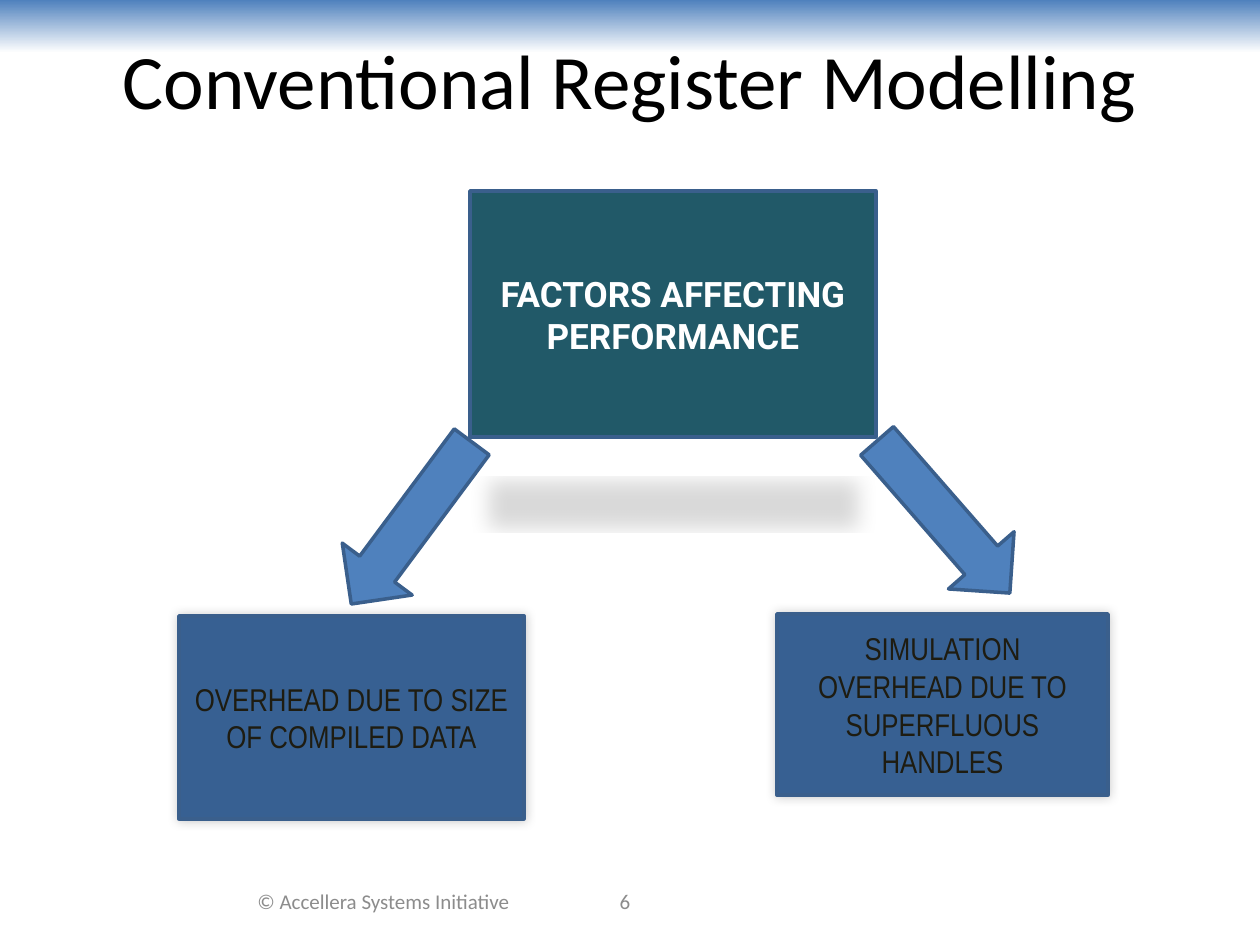
from lxml.etree import SubElement as Sub
from pptx import Presentation
from pptx.dml.color import RGBColor as RGB
from pptx.enum.shapes import MSO_SHAPE as Shape
from pptx.enum.text import MSO_ANCHOR as Anchor, PP_ALIGN as Align
from pptx.oxml.ns import qn
from pptx.util import Pt

PX = 914400 / 126
SIZE = (1260, 945)
EDGE = "3A5F8C"

# Text formats
TITLE = dict(name="Calibri", size=Pt(44), color="000000")
FOOT = dict(name="Calibri", size=Pt(12), color="8C8C8C")
HEAD = dict(name="Roboto", size=Pt(20), bold=True, color="FFFFFF")
LEAF = dict(name="Arial Narrow", size=Pt(18), color="1E1C11")

# Shadows: opacity in percent, then the attributes of the effect
FLOOR = (15, dict(blurRad=152400, dist=317500, dir=5400000,
                  sx=90000, sy=-19000, rotWithShape=0))
GLOW = (20, dict(blurRad=76200, dist=0, dir=13500000, rotWithShape=0))

# Content: box in px (left, top, width, height)
BAR = ((0, 0, 1260, 53), ("4F81BD", "FFFFFF"))
TEXTS = [
    ("Conventional Register Modelling", (63, 0, 1134, 158), TITLE),
    ("© Accellera Systems Initiative", (231, 876, 305, 50), FOOT),
    ("6", (504, 876, 242, 50), FOOT),
]
BOXES = [
    ("FACTORS AFFECTING PERFORMANCE", (470, 191, 406, 246), "215968", HEAD, FLOOR),
    ("OVERHEAD DUE TO SIZE OF COMPILED DATA", (179, 616, 345, 203), "376092", LEAF, GLOW),
    ("SIMULATION OVERHEAD DUE TO SUPERFLUOUS HANDLES", (777, 614, 331, 181),
     "376092", LEAF, GLOW),
]
ARROWS = [((368, 422, 87, 202), 36.6), ((900, 416, 87, 202), 318.9)]


def emu(box):
    return [round(n * PX) for n in box]


def tint(part, color):
    part.rgb = RGB.from_string(color)


def write(shape, text, form):
    frame = shape.text_frame
    frame.word_wrap = True
    frame.vertical_anchor = Anchor.MIDDLE
    para = frame.paragraphs[0]
    para.alignment = Align.CENTER
    run = para.add_run()
    run.text = text
    for key, val in form.items():
        if key == "color":
            tint(run.font.color, val)
        else:
            setattr(run.font, key, val)


def draw(kind, box, fill):
    shape = slide.shapes.add_shape(kind, *emu(box))
    shape.shadow.inherit = False
    shape.fill.solid()
    tint(shape.fill.fore_color, fill)
    tint(shape.line.color, EDGE)
    shape.line.width = Pt(2)
    return shape


def shade(shape, alpha, attrs):
    root = shape.element.spPr.find(qn("a:effectLst"))
    cast = Sub(root, qn("a:outerShdw"), {k: str(v) for k, v in attrs.items()})
    color = Sub(cast, qn("a:srgbClr"), val="000000")
    Sub(color, qn("a:alpha"), val=str(alpha * 1000))


deck = Presentation()
deck.slide_width, deck.slide_height = emu(SIZE)
slide = deck.slides.add_slide(deck.slide_layouts[6])

# Gradient bar along the top
box, stops = BAR
bar = slide.shapes.add_shape(Shape.RECTANGLE, *emu(box))
bar.shadow.inherit = False
bar.line.fill.background()
bar.fill.gradient()
bar.fill.gradient_angle = 270
for stop, color, pos in zip(bar.fill.gradient_stops, stops, (0, 1)):
    tint(stop.color, color)
    stop.position = pos

# Title and footer
for text, box, form in TEXTS:
    write(slide.shapes.add_textbox(*emu(box)), text, form)

# Factor boxes
for text, box, fill, form, cast in BOXES:
    shape = draw(Shape.RECTANGLE, box, fill)
    shade(shape, *cast)
    write(shape, text, form)

# Arrows from the head box to the factors
for box, turn in ARROWS:
    draw(Shape.DOWN_ARROW, box, "4F81BD").rotation = turn

deck.save("out.pptx")
